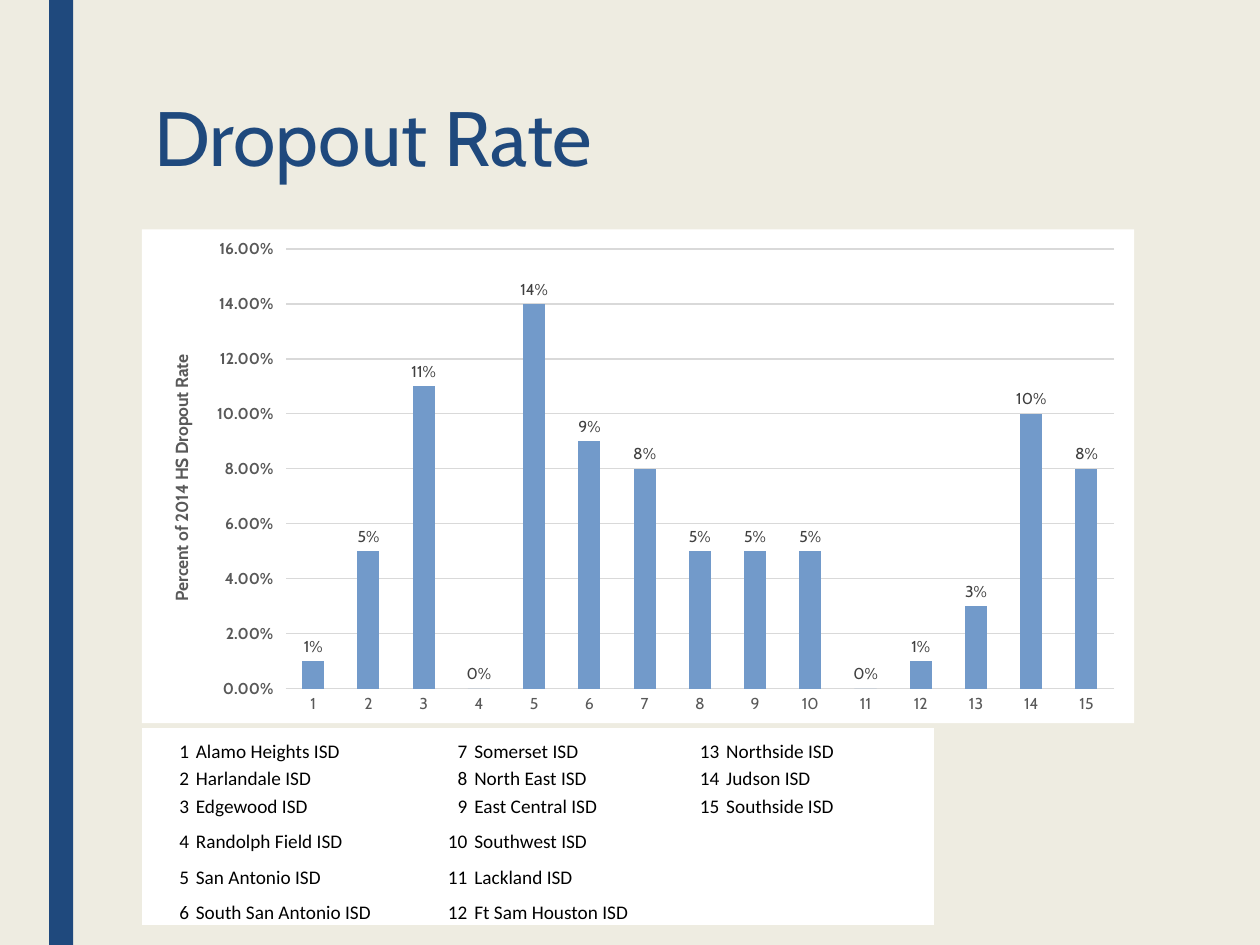
from lxml import etree
from pptx import Presentation
from pptx import util as u
from pptx.chart import data as chart_data
from pptx.dml import color
from pptx.enum import chart as ch, shapes, text
from pptx.oxml import ns

NAVY, CREAM, BLUE, WHITE = "1F497D", "EEECE1", "729ACA", "FFFFFF"
BLACK, GRAY, DARK, PALE = "000000", "595959", "404040", "D9D9D9"
RATES = [0.01, 0.05, 0.11, 0, 0.14, 0.09, 0.08, 0.05, 0.05,
         0.05, 0, 0.01, 0.03, 0.1, 0.08]
DISTRICTS = ["Alamo Heights", "Harlandale", "Edgewood", "Randolph Field",
             "San Antonio", "South San Antonio", "Somerset", "North East",
             "East Central", "Southwest", "Lackland", "Ft Sam Houston",
             "Northside", "Judson", "Southside"]


def rgb(value):
    return color.RGBColor.from_string(value)


def paint(fill, value):
    fill.solid()
    fill.fore_color.rgb = rgb(value)


class Deck:
    """Draws styled elements on a slide grid of 100 columns by 75 rows."""

    def __init__(self, font):
        self.font = font
        self.presentation = Presentation()
        self.presentation.slide_width = u.Inches(10)
        self.presentation.slide_height = u.Inches(7.5)
        self.slide = self.presentation.slides.add_slide(
            self.presentation.slide_layouts[5])
        paint(self.slide.background.fill, CREAM)

    def grid(self, *lengths):
        column = self.presentation.slide_width / 100
        return [u.Emu(round(length * column)) for length in lengths]

    def style(self, font, size, value, bold=False, name=None):
        font.name, font.size, font.bold = name or self.font, u.Pt(size), bold
        font.color.rgb = rgb(value)

    def band(self, *box):
        shape = self.slide.shapes.add_shape(
            shapes.MSO_SHAPE.RECTANGLE, *self.grid(*box))
        shape.shadow.inherit = False
        paint(shape.fill, NAVY)
        shape.line.fill.background()

    def title(self, words, *box):
        shape = self.slide.shapes.title
        shape.left, shape.top, shape.width, shape.height = self.grid(*box)
        frame = shape.text_frame
        frame.text = words
        frame.vertical_anchor = text.MSO_ANCHOR.TOP
        frame.auto_size = text.MSO_AUTO_SIZE.NONE
        paragraph = frame.paragraphs[0]
        paragraph.alignment = text.PP_ALIGN.LEFT
        paragraph.line_spacing = 0.89
        self.style(paragraph.font, 44, NAVY)

    def chart(self, values, axis_title, *box):
        source = chart_data.CategoryChartData(number_format="0%")
        source.categories = [str(i + 1) for i in range(len(values))]
        source.add_series("Series 1", values)
        chart = self.slide.shapes.add_chart(
            ch.XL_CHART_TYPE.COLUMN_CLUSTERED, *self.grid(*box), source).chart
        chart.has_title = chart.has_legend = False
        self.style(chart.font, 10, BLACK)
        self.category_axis(chart.category_axis)
        self.value_axis(chart.value_axis, axis_title)
        self.columns(chart.plots[0])
        self.frame_chart(chart, x=0.145, y=0.04, w=0.835, h=0.89)

    def category_axis(self, axis):
        axis.major_tick_mark = ch.XL_TICK_MARK.NONE
        axis.format.line.color.rgb = rgb(PALE)
        axis.format.line.width = u.Pt(0.75)
        self.style(axis.tick_labels.font, 9, GRAY)

    def value_axis(self, axis, axis_title):
        axis.minimum_scale, axis.maximum_scale, axis.major_unit = 0, 0.16, 0.02
        axis.format.line.fill.background()
        axis.major_gridlines.format.line.color.rgb = rgb(PALE)
        axis.major_gridlines.format.line.width = u.Pt(0.75)
        axis.tick_labels.number_format = "0.00%"
        axis.tick_labels.number_format_is_linked = False
        self.style(axis.tick_labels.font, 9, GRAY, bold=True)
        frame = axis.axis_title.text_frame
        frame.text = axis_title
        self.style(frame.paragraphs[0].font, 10, GRAY, bold=True)

    def columns(self, plot):
        plot.gap_width, plot.vary_by_categories = 150, False
        paint(plot.series[0].format.fill, BLUE)
        labels = plot.series[0].data_labels
        labels.show_value = True
        labels.position = ch.XL_LABEL_POSITION.OUTSIDE_END
        labels.number_format, labels.number_format_is_linked = "0%", False
        self.style(labels.font, 9, DARK)

    def frame_chart(self, chart, **shares):
        space = chart.element
        area = etree.Element(ns.qn("c:spPr"))
        fill = etree.SubElement(area, ns.qn("a:solidFill"))
        etree.SubElement(fill, ns.qn("a:srgbClr"), val=WHITE)
        line = etree.SubElement(area, ns.qn("a:ln"))
        etree.SubElement(line, ns.qn("a:noFill"))
        space.find(ns.qn("c:chart")).addnext(area)
        plot_area = space.find(".//" + ns.qn("c:plotArea"))
        layout = plot_area.find(ns.qn("c:layout"))
        if layout is None:
            layout = etree.Element(ns.qn("c:layout"))
            plot_area.insert(0, layout)
        manual = etree.SubElement(layout, ns.qn("c:manualLayout"))
        settings = {"layoutTarget": "inner", "xMode": "edge", "yMode": "edge"}
        for tag, value in (settings | shares).items():
            etree.SubElement(manual, ns.qn("c:" + tag), val=str(value))

    def key(self, names, left, top, widths, heights):
        rows, columns = len(heights), len(widths)
        table = self.slide.shapes.add_table(
            rows, columns,
            *self.grid(left, top, sum(widths), sum(heights))).table
        table.first_row = table.horz_banding = False
        for column, width in zip(table.columns, self.grid(*widths)):
            column.width = width
        for row, height in zip(table.rows, self.grid(*heights)):
            row.height = height
        for r in range(rows):
            for c in range(columns):
                index = c // 2 * rows + r
                words = ""
                if index < len(names):
                    words = f" {names[index]} ISD" if c % 2 else str(index + 1)
                self.key_cell(table.cell(r, c), words, c % 2 == 0)

    def key_cell(self, cell, words, is_number):
        paint(cell.fill, WHITE)
        cell.margin_left = cell.margin_right = cell.margin_top = u.Inches(0.01)
        cell.margin_bottom = 0
        cell.vertical_anchor = text.MSO_ANCHOR.BOTTOM
        cell.text = words
        paragraph = cell.text_frame.paragraphs[0]
        if not words:
            end = etree.SubElement(paragraph._p, ns.qn("a:endParaRPr"))
            end.set("sz", "1100")
        paragraph.alignment = (text.PP_ALIGN.RIGHT if is_number
                               else text.PP_ALIGN.LEFT)
        self.style(paragraph.font, 11, BLACK, name="Calibri")


def main():
    deck = Deck("Cabin")
    deck.band(3.9, 0, 1.9, 75)
    deck.title("Dropout Rate", 11.25, 7.5, 78.75, 16.2)
    deck.chart(RATES, "Percent of 2014 HS Dropout Rate ",
               11.25, 18.2, 78.75, 39.2)
    deck.key(DISTRICTS, 11.3, 57.8, [3.8, 18, 4.1, 16.4, 3.6, 16.9],
             [2.8, 2.2, 2.2, 2.8, 2.8, 2.8])
    deck.presentation.save("out.pptx")


if __name__ == "__main__":
    main()
